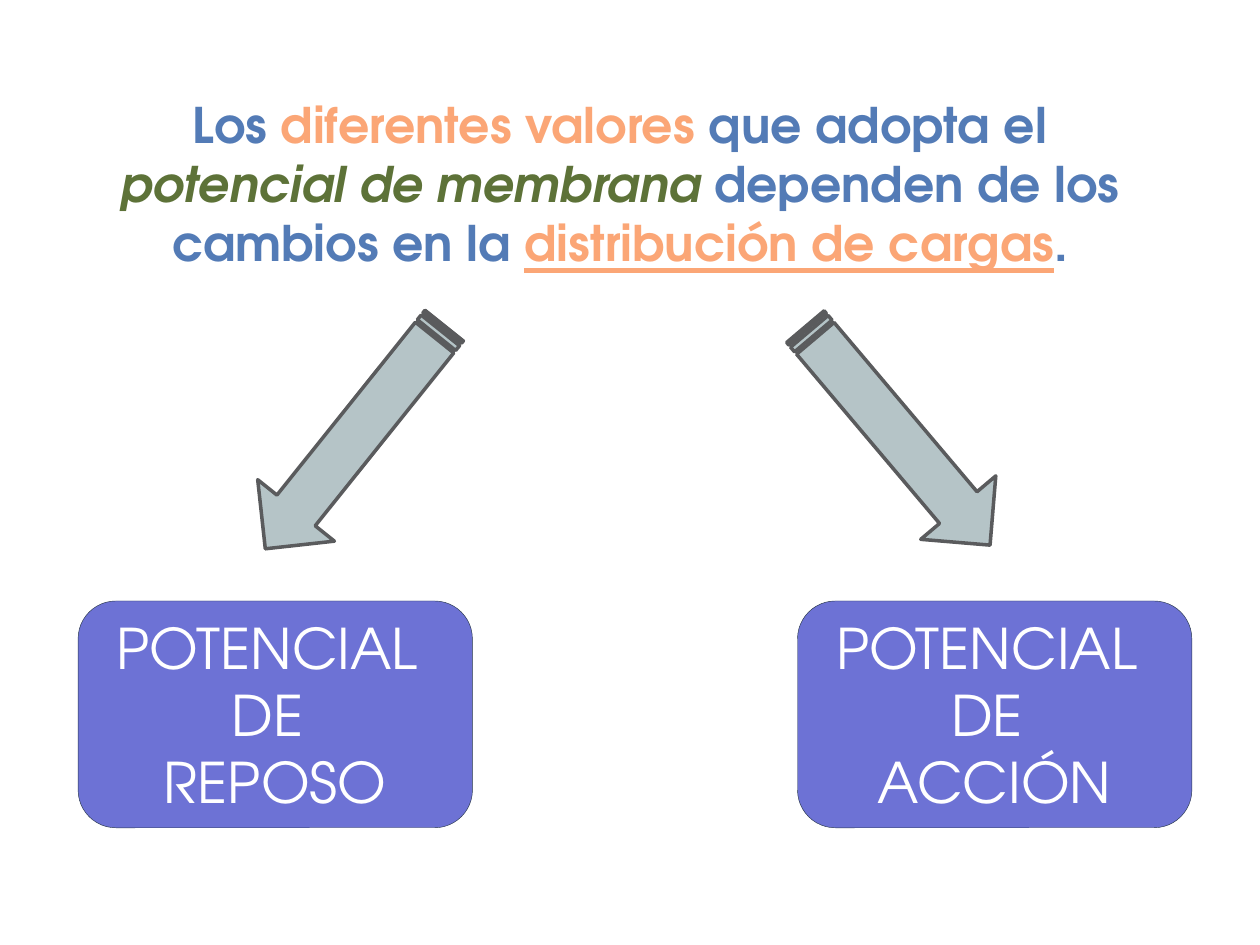
from pptx import Presentation
from pptx.dml.color import RGBColor
from pptx.enum.shapes import MSO_SHAPE
from pptx.enum.text import MSO_ANCHOR, MSO_AUTO_SIZE, PP_ALIGN
from pptx.util import Inches, Pt

ROUNDED = MSO_SHAPE.ROUNDED_RECTANGLE
ARROW = MSO_SHAPE.STRIPED_RIGHT_ARROW
TOP, MIDDLE = MSO_ANCHOR.TOP, MSO_ANCHOR.MIDDLE
NO_AUTOFIT = MSO_AUTO_SIZE.NONE
CENTER = PP_ALIGN.CENTER
TITLE_ONLY = 5

FONT = "TeX Gyre Adventor"
BLUE, ORANGE, GREEN = "537BB6", "FBA676", "5D7238"

# text, colour, italic, underline
STATEMENT = [
    ("Los ", BLUE, False, False),
    ("diferentes valores ", ORANGE, False, False),
    ("que adopta el ", BLUE, False, False),
    ("potencial de membrana ", GREEN, True, False),
    ("dependen de los cambios en la ", BLUE, False, False),
    ("distribución de cargas", ORANGE, False, True),
    (".", BLUE, False, False),
]


def rgb(value):
    return RGBColor.from_string(value)


def format_run(r, size, color):
    r.font.name = FONT
    r.font.size = Pt(size)
    r.font.color.rgb = rgb(color)


def place_title(slide, left, top, width, height):
    title = slide.shapes.title
    title.left, title.top = Inches(left), Inches(top)
    title.width, title.height = Inches(width), Inches(height)
    tf = title.text_frame
    tf.word_wrap = True
    tf.auto_size = NO_AUTOFIT
    tf.vertical_anchor = TOP
    p = tf.paragraphs[0]
    p.alignment = CENTER
    for text, color, italic, underline in STATEMENT:
        r = p.add_run()
        r.text = text
        format_run(r, 28, color)
        r.font.bold = True
        r.font.italic = italic
        r.font.underline = underline


def add_shape(slide, kind, box, fill, line, line_width):
    sp = slide.shapes.add_shape(kind, *map(Inches, box))
    sp.shadow.inherit = False
    sp.fill.solid()
    sp.fill.fore_color.rgb = rgb(fill)
    sp.line.color.rgb = rgb(line)
    sp.line.width = Pt(line_width)
    return sp


def add_arrow(slide, box, rotation):
    sp = add_shape(slide, ARROW, box, "B5C4C7", "5A5B5D", 2)
    sp.rotation = rotation


def add_potential(slide, box, name):
    sp = add_shape(slide, ROUNDED, box, "6D72D5", "28374A", 0.25)
    tf = sp.text_frame
    tf.word_wrap = True
    tf.vertical_anchor = MIDDLE
    tf.text = f"POTENCIAL \nDE \n{name}"
    for p in tf.paragraphs:
        p.alignment = CENTER
        format_run(p.runs[0], 32, "FFFFFF")


def main():
    prs = Presentation()
    prs.slide_width, prs.slide_height = Inches(10), Inches(7.5)
    slide = prs.slides.add_slide(prs.slide_layouts[TITLE_ONLY])
    place_title(slide, 0.78, 0.7, 8.28, 1.51)
    for left, name in ((0.62, "REPOSO"), (6.33, "ACCIÓN")):
        add_potential(slide, (left, 4.77, 3.13, 1.8), name)
    for left, top, rotation in ((5.99, 3.07, 49.8), (1.68, 3.08, 128.7)):
        add_arrow(slide, (left, top, 2.27, 0.78), rotation)
    prs.save("out.pptx")


if __name__ == "__main__":
    main()
